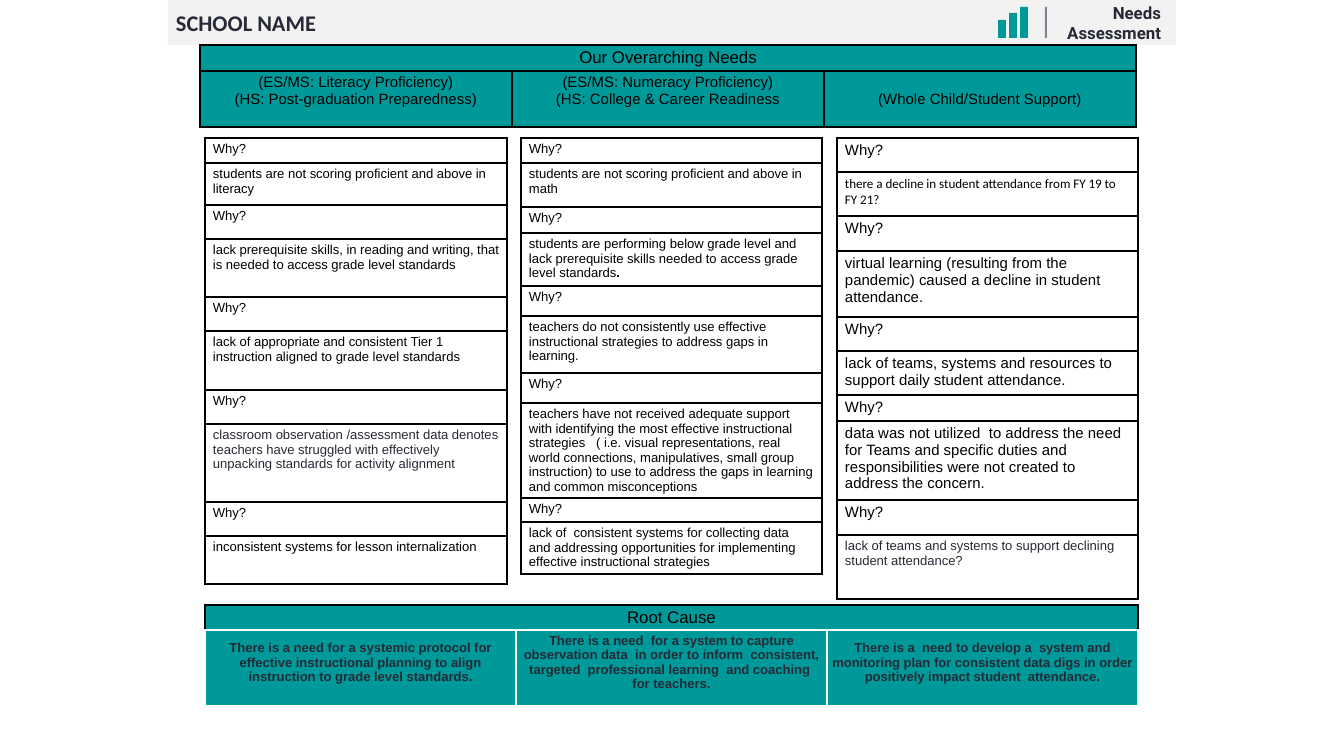
from lxml import etree
from pptx import Presentation
from pptx import util as u
from pptx.dml import color
from pptx.enum import shapes, text
from pptx.oxml import ns

SCALE = 914400 / 134.4
HUES = {"teal": "009999", "bar": "F2F2F2", "rule": "808392",
        "ink": "272A36", "black": "000000", "white": "FFFFFF"}
ALPHAS = (40, 29, 20)
MIDDLE = text.MSO_ANCHOR.MIDDLE
TOP = text.MSO_ANCHOR.TOP
CENTER = text.PP_ALIGN.CENTER
LEFT = text.PP_ALIGN.LEFT
RIGHT = text.PP_ALIGN.RIGHT

READING = [
    "students are not scoring proficient and above in literacy",
    "lack prerequisite skills, in reading and writing, that is needed to access grade level standards",
    "lack of appropriate and consistent Tier 1 instruction aligned to grade level standards",
    ("classroom observation /assessment data denotes teachers have struggled with effectively "
     "unpacking standards for activity alignment", {"hue": "ink"}),
    "inconsistent systems for lesson internalization",
]
MATH = [
    "students are not scoring proficient and above in math",
    "students are performing below grade level and lack prerequisite skills needed to access "
    "grade level standards",
    "teachers do not consistently use effective instructional strategies to address gaps in learning.",
    "teachers have not received adequate support with identifying the most effective instructional "
    "strategies   ( i.e. visual representations, real world connections, manipulatives, small group "
    "instruction) to use to address the gaps in learning and common misconceptions",
    "lack of  consistent systems for collecting data and addressing opportunities for implementing "
    "effective instructional strategies",
]
SUPPORT = [
    ("there a decline in student attendance from FY 19 to FY 21?", {"size": 7, "font": "Calibri"}),
    "virtual learning (resulting from the  pandemic) caused a decline in student attendance.",
    "lack of teams, systems and resources to support daily student attendance.",
    "data was not utilized  to address the need for Teams and specific duties and responsibilities "
    "were not created to address the concern.",
    ("lack of teams and systems to support declining student attendance?", {"size": 7, "hue": "ink"}),
]
COLUMNS = [
    (205, 302, 7, (25, 42, 34, 58, 34, 59, 34, 78, 34, 48), READING),
    (521, 301, 7, (25, 44, 26, 53, 30, 57, 30, 95, 24, 52), MATH),
    (837, 301, 8, (34, 44, 35, 66, 34, 44, 26, 79, 35, 64), SUPPORT),
]
NEEDS = [
    ("(ES/MS: Literacy Proficiency)\n(HS: Post-graduation Preparedness)", {"anchor": TOP}),
    ("(ES/MS: Numeracy Proficiency)\n(HS: College & Career Readiness", {"anchor": TOP}),
    ("(Whole Child/Student Support)", {"anchor": MIDDLE}),
]
CAUSES = [
    "There is a need for a systemic protocol for effective instructional planning to align "
    "instruction to grade level standards.",
    "There is a need  for a system to capture observation data  in order to inform  consistent, "
    "targeted  professional learning  and coaching  for teachers.",
    "There is a  need to develop a  system and monitoring plan for consistent data digs in order "
    "positively impact student  attendance.",
]


def px(n):
    return u.Emu(round(n * SCALE))


def rgb(hue):
    return color.RGBColor.from_string(HUES[hue])


def write(frame, words, size=7, hue="black", font="Arial", bold=False, align=LEFT):
    frame.word_wrap = True
    frame.text = words
    for para in frame.paragraphs:
        para.alignment = align
        for run in para.runs:
            run.font.size = u.Pt(size)
            run.font.name = font
            run.font.bold = bold
            run.font.color.rgb = rgb(hue)


def inset(host, x, y, low=None):
    host.margin_left = host.margin_right = px(x)
    host.margin_top = px(y)
    host.margin_bottom = px(y if low is None else low)


def place(shape, x, y, w, h):
    shape.left, shape.top, shape.width, shape.height = map(px, (x, y, w, h))


def block(slide, x, y, w, h, hue):
    shape = slide.shapes.add_shape(shapes.MSO_SHAPE.RECTANGLE, *map(px, (x, y, w, h)))
    shape.shadow.inherit = False
    shape.fill.solid()
    shape.fill.fore_color.rgb = rgb(hue)
    shape.line.fill.background()
    return shape


def label(shape, box, words, **form):
    place(shape, *box)
    frame = shape.text_frame
    frame.auto_size = text.MSO_AUTO_SIZE.NONE
    frame.vertical_anchor = MIDDLE
    inset(frame, 8, 8)
    write(frame, words, **form)


def edge(cell, sides, hue, width):
    props = cell._tc.get_or_add_tcPr()
    for side in sides:
        line = etree.SubElement(props, ns.qn("a:ln" + side), w=str(u.Pt(width)))
        fill = etree.SubElement(line, ns.qn("a:solidFill"))
        etree.SubElement(fill, ns.qn("a:srgbClr"), val=HUES[hue])


def tint(cell, alpha=100):
    cell.fill.solid()
    cell.fill.fore_color.rgb = rgb("teal")
    if alpha < 100:
        tone = cell._tc.tcPr.find(".//" + ns.qn("a:srgbClr"))
        etree.SubElement(tone, ns.qn("a:alpha"), val=str(alpha * 1000))


def grid(slide, x, y, cols, rows):
    box = map(px, (x, y, sum(cols), sum(rows)))
    table = slide.shapes.add_table(len(rows), len(cols), *box).table
    table.first_row = table.horz_banding = False
    for col, size in zip(table.columns, cols):
        col.width = px(size)
    for row, size in zip(table.rows, rows):
        row.height = px(size)
    return table


def band(slide, x, y, col, rows, head, items, low=3, inner="black", **form):
    table = grid(slide, x, y, [col] * 3, rows)
    for n, item in enumerate(items):
        words, extra = item if isinstance(item, tuple) else (item, {"anchor": MIDDLE})
        top, cell = table.cell(0, n), table.cell(1, n)
        edge(top, "LRT", "black", 1)
        edge(top, "B", inner, 1)
        edge(cell, "LRTB", inner, 1)
        tint(top)
        tint(cell, ALPHAS[n])
        inset(top, 5, 3)
        inset(cell, 5, 3, low)
        cell.vertical_anchor = extra["anchor"]
        write(cell.text_frame, words, align=CENTER, **form)
    table.cell(0, 0).merge(table.cell(0, 2))
    write(table.cell(0, 0).text_frame, head, size=9, align=CENTER)


def chain(slide, x, width, size, rows, replies):
    table = grid(slide, x, 138, [width], rows)
    steps = [step for reply in replies for step in ("Why?", reply)]
    for n, step in enumerate(steps):
        words, form = step if isinstance(step, tuple) else (step, {})
        cell = table.cell(n, 0)
        edge(cell, "LRTB", "black", 1)
        cell.fill.background()
        inset(cell, 8, 4)
        write(cell.text_frame, words, **{"size": size, **form})
    return table


def header(slide):
    title = slide.shapes.title
    bar = block(slide, 168, 0, 1008, 45, "bar")
    title.element.addprevious(bar.element)
    label(title, (168, 0, 376, 45), "SCHOOL NAME",
          size=12, font="Calibri", hue="ink", bold=True)
    for n, top in enumerate((20, 13, 7)):
        block(slide, 998 + 11 * n, top, 8, 38 - top, "teal")
    block(slide, 1045, 7, 2, 31, "rule")
    label(slide.shapes.add_textbox(0, 0, 0, 0), (1013, 0, 156, 45), "Needs Assessment",
          size=9, font="Roboto", hue="ink", bold=True, align=RIGHT)


def main():
    deck = Presentation()
    deck.slide_width, deck.slide_height = px(1344), px(756)
    slide = deck.slides.add_slide(deck.slide_layouts[5])
    header(slide)
    band(slide, 200, 45, 312, (26, 56), "Our Overarching Needs", NEEDS, size=8)
    band(slide, 205, 605, 311, (25, 76), "Root Cause", CAUSES,
         low=14, inner="white", hue="ink", bold=True)
    tables = [chain(slide, *column) for column in COLUMNS]
    stop = tables[1].cell(3, 0).text_frame.paragraphs[0].add_run()
    stop.text = "."
    stop.font.size, stop.font.name, stop.font.bold = u.Pt(7), "Arial", True
    stop.font.color.rgb = rgb("black")
    deck.save("out.pptx")


if __name__ == "__main__":
    main()
